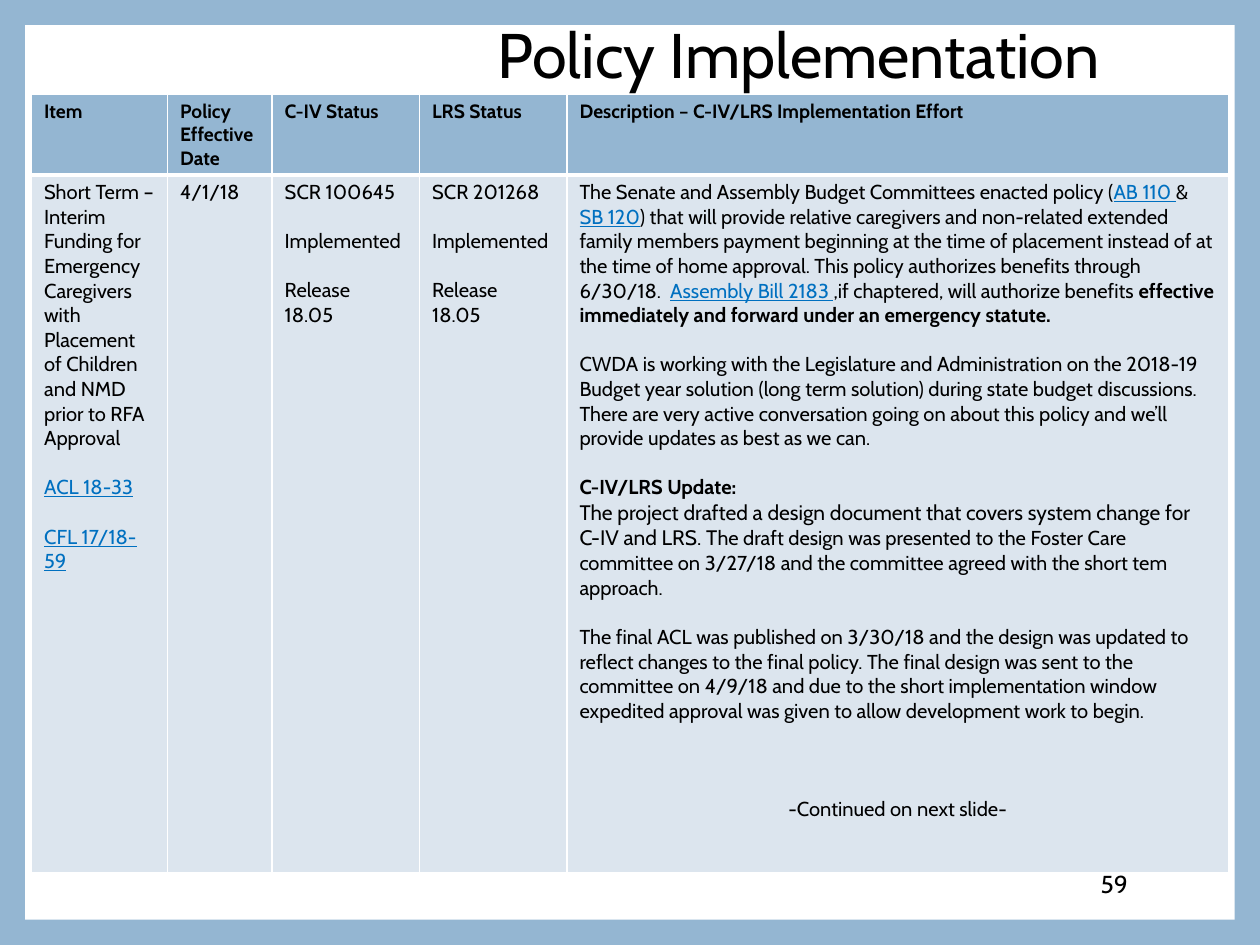
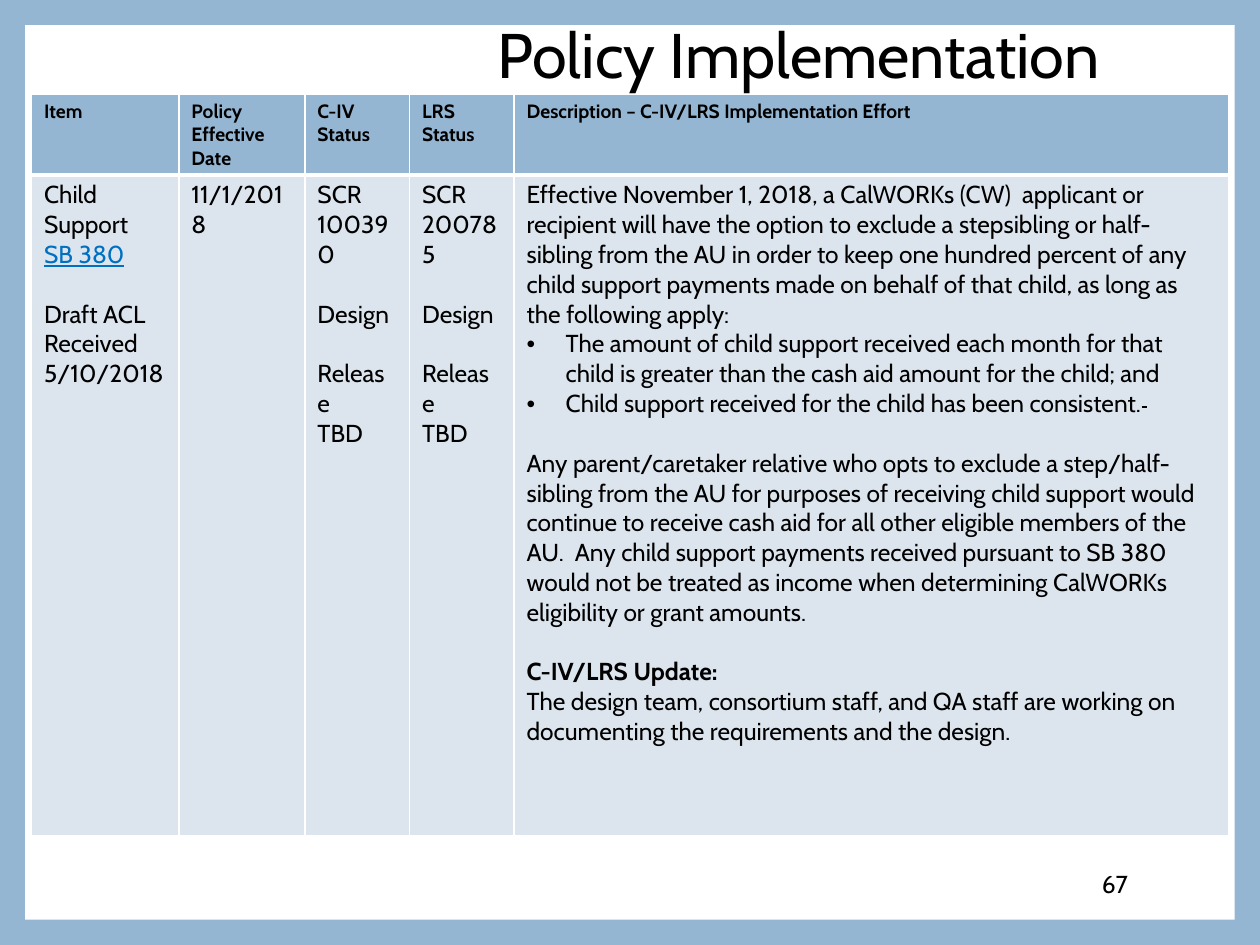
from dataclasses import dataclass

from lxml.etree import SubElement
from pptx import Presentation
from pptx.dml.color import RGBColor
from pptx.enum.shapes import MSO_SHAPE as Shape
from pptx.enum.text import MSO_ANCHOR as Anchor, MSO_AUTO_SIZE as AutoSize, PP_ALIGN as Align
from pptx.oxml.ns import qn
from pptx.util import Inches, Pt

BLUE = RGBColor(0x94, 0xB6, 0xD2)
PALE = RGBColor(0xDC, 0xE5, 0xEE)
LINK_BLUE = RGBColor(0x00, 0x70, 0xC0)
WHITE = RGBColor(0xFF, 0xFF, 0xFF)
BLACK = RGBColor(0x00, 0x00, 0x00)
FONT = "Cabin"
LINE_HEIGHT = 1.22
HEADER_SIZE = 11
HEADINGS = ["Item", "Policy Effective Date", "C-IV Status", "LRS Status",
            "Description – C-IV/LRS Implementation Effort"]


@dataclass
class Entry:
    """One paragraph: (text, style) spans, and the blank lines above it."""
    spans: list
    gap: int = 0
    bullet: bool = False
    centered: bool = False


def plain(text, gap=0, style="", **options):
    """An entry with a single span."""
    return Entry([(text, style)], gap, **options)


def status(number, stage, release):
    return [plain(f"SCR {number}"), plain(stage, 1), plain("Release", 1), plain(release)]


PAGES = [
    {
        "number": "59",
        "columns": [1.08, 0.83, 1.17, 1.17, 5.25],
        "rows": [0.63, 5.54],
        "size": 11.5,
        "cells": [
            [
                plain("Short Term – Interim Funding for Emergency Caregivers with "
                      "Placement of Children and NMD prior to RFA Approval"),
                plain("ACL 18-33", 1, "link"),
                plain("CFL 17/18-59", 1, "link"),
            ],
            [plain("4/1/18")],
            status("100645", "Implemented", "18.05"),
            status("201268", "Implemented", "18.05"),
            [
                Entry([
                    ("The Senate and Assembly Budget Committees enacted policy (", ""),
                    ("AB 110 ", "link"),
                    ("& ", ""),
                    ("SB 120", "link"),
                    (") that will provide relative caregivers and non-related extended "
                     "family members payment beginning at the time of placement instead "
                     "of at the time of home approval. This policy authorizes benefits "
                     "through 6/30/18.  ", ""),
                    ("Assembly Bill 2183 ", "link"),
                    (",if chaptered, will authorize benefits ", ""),
                    ("effective immediately and forward under an emergency statute.", "bold"),
                ]),
                plain("CWDA is working with the Legislature and Administration on the "
                      "2018-19 Budget year solution (long term solution) during state "
                      "budget discussions.  There are very active conversation going on "
                      "about this policy and we’ll provide updates as best as we can.", 1),
                plain("C-IV/LRS Update:", 1, "bold"),
                Entry([
                    ("The project drafted a design document that covers system change for "
                     "C-IV and LRS. T", "large"),
                    ("he draft design was presented to the Foster Care committee on 3/27/18 "
                     "and the committee agreed with the short tem approach.", ""),
                ]),
                plain("The final ACL was published on 3/30/18 and the design was updated to "
                      "reflect changes to the final policy. The final design was sent to the "
                      "committee on 4/9/18 and due to the short implementation window "
                      "expedited approval was given to allow development work to begin.", 1),
                plain("-Continued on next slide-", 3, centered=True),
            ],
        ],
    },
    {
        "number": "67",
        "columns": [1.17, 1, 0.83, 0.83, 5.67],
        "rows": [0.62, 5.24],
        "size": 14,
        "cells": [
            [
                plain("Child Support"),
                plain("SB 380", style="link"),
                plain("Draft ACL Received 5/10/2018", 1),
            ],
            [plain("11/1/2018")],
            status("100390", "Design", "TBD"),
            status("200785", "Design", "TBD"),
            [
                plain("Effective November 1, 2018, a CalWORKs (CW)  applicant or recipient "
                      "will have the option to exclude a stepsibling or half-sibling from "
                      "the AU in order to keep one hundred percent of any child support "
                      "payments made on behalf of that child, as long as the following apply:"),
                plain("The amount of child support received each month for that child is "
                      "greater than the cash aid amount for the child; and", bullet=True),
                Entry([("Child support received for the child has been consistent.", ""),
                       (" ", "strike")], bullet=True),
                plain("Any parent/caretaker relative who opts to exclude a step/half-sibling "
                      "from the AU for purposes of receiving child support would continue to "
                      "receive cash aid for all other eligible members of the AU.  Any child "
                      "support payments received pursuant to SB 380 would not be treated as "
                      "income when determining CalWORKs eligibility or grant amounts.", 1),
                plain("C-IV/LRS Update:", 1, "bold"),
                plain("The design team, consortium staff, and QA staff are working on "
                      "documenting the requirements and the design."),
            ],
        ],
    },
]

deck = Presentation()
deck.slide_width, deck.slide_height = Inches(10), Inches(7.5)
backdrop = deck.slide_master.background.fill
backdrop.solid()
backdrop.fore_color.rgb = BLUE
title_only = deck.slide_layouts[5]

for content in PAGES:
    page = deck.slides.add_slide(title_only)

    # White panel behind everything else
    panel = page.shapes.add_shape(Shape.RECTANGLE, Inches(0.2), Inches(0.2),
                                  Inches(9.6), Inches(7.1))
    panel.shadow.inherit = False
    panel.fill.solid()
    panel.fill.fore_color.rgb = WHITE
    panel.line.fill.background()
    page.shapes.title._element.addprevious(panel._element)

    # Title and page number
    title = page.shapes.title
    title.left, title.top = Inches(0.5), Inches(0.17)
    title.width, title.height = Inches(8.33), Inches(0.58)
    number = page.shapes.add_textbox(Inches(7.65), Inches(6.81), Inches(1.4), Inches(0.4))
    for box, text, size in [(title, "Policy Implementation", 36),
                            (number, content["number"], 14)]:
        frame = box.text_frame
        frame.text = text
        frame.word_wrap = True
        frame.auto_size = AutoSize.NONE
        frame.vertical_anchor = Anchor.MIDDLE
        para = frame.paragraphs[0]
        para.alignment = Align.RIGHT
        font = para.runs[0].font
        font.name, font.size, font.color.rgb = FONT, Pt(size), BLACK
    title.text_frame.paragraphs[0].line_spacing = 0.9

    # Policy table
    table = page.shapes.add_table(2, len(HEADINGS), Inches(0.25), Inches(0.75), Inches(9.5),
                                  Inches(sum(content["rows"]))).table
    table.horz_banding = False
    for column, width in zip(table.columns, content["columns"]):
        column.width = Inches(width)
    for row, height in zip(table.rows, content["rows"]):
        row.height = Inches(height)

    header = [[plain(heading, style="bold")] for heading in HEADINGS]
    for row_index, (entries_by_cell, size, fill, top, bottom) in enumerate([
            (header, HEADER_SIZE, BLUE, 1, 3),
            (content["cells"], content["size"], PALE, 3, 1)]):
        for column_index, entries in enumerate(entries_by_cell):
            cell = table.cell(row_index, column_index)
            cell.margin_top = cell.margin_bottom = Inches(0.04)
            properties = cell._tc.get_or_add_tcPr()
            for side, weight in [("L", 1), ("R", 1), ("T", top), ("B", bottom)]:
                border = SubElement(properties, qn(f"a:ln{side}"), w=str(Pt(weight)))
                color = SubElement(border, qn("a:solidFill"))
                SubElement(color, qn("a:srgbClr"), val=str(WHITE))
            cell.fill.solid()
            cell.fill.fore_color.rgb = fill

            for index, entry in enumerate(entries):
                frame = cell.text_frame
                para = frame.add_paragraph() if index else frame.paragraphs[0]
                para.alignment = Align.CENTER if entry.centered else Align.LEFT
                if entry.gap:
                    para.space_before = Pt(entry.gap * LINE_HEIGHT * size)
                if entry.bullet:
                    layout = para._p.get_or_add_pPr()
                    layout.set("marL", str(Inches(0.31)))
                    layout.set("indent", str(-Inches(0.31)))
                    SubElement(layout, qn("a:buFont"), typeface="Arial")
                    SubElement(layout, qn("a:buChar"), char="•")
                for text, style in entry.spans:
                    span = para.add_run()
                    span.text = text
                    font = span.font
                    font.name = FONT
                    font.size = Pt(12 if style == "large" else size)
                    font.bold = style == "bold"
                    font.color.rgb = LINK_BLUE if style == "link" else BLACK
                    if style == "link":
                        font.underline = True
                    if style == "strike":
                        span._r.get_or_add_rPr().set("strike", "sngStrike")

deck.save("out.pptx")
